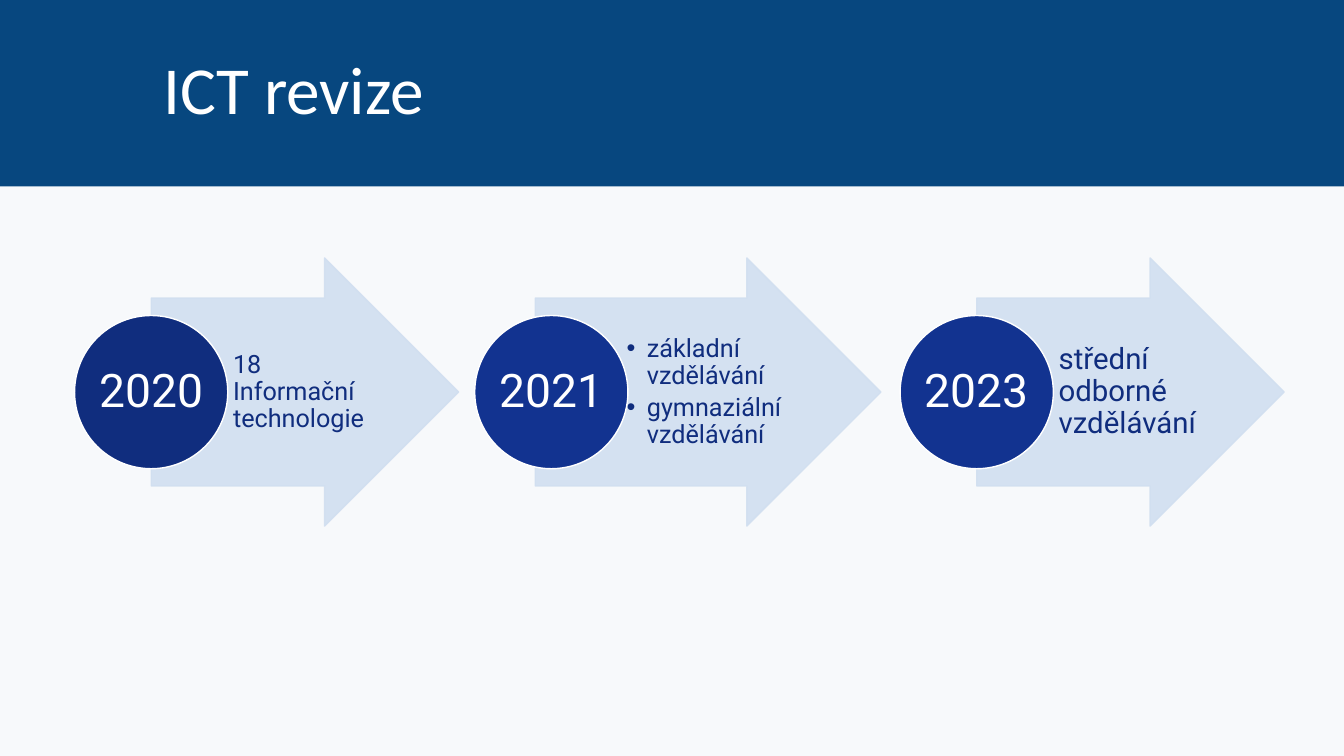
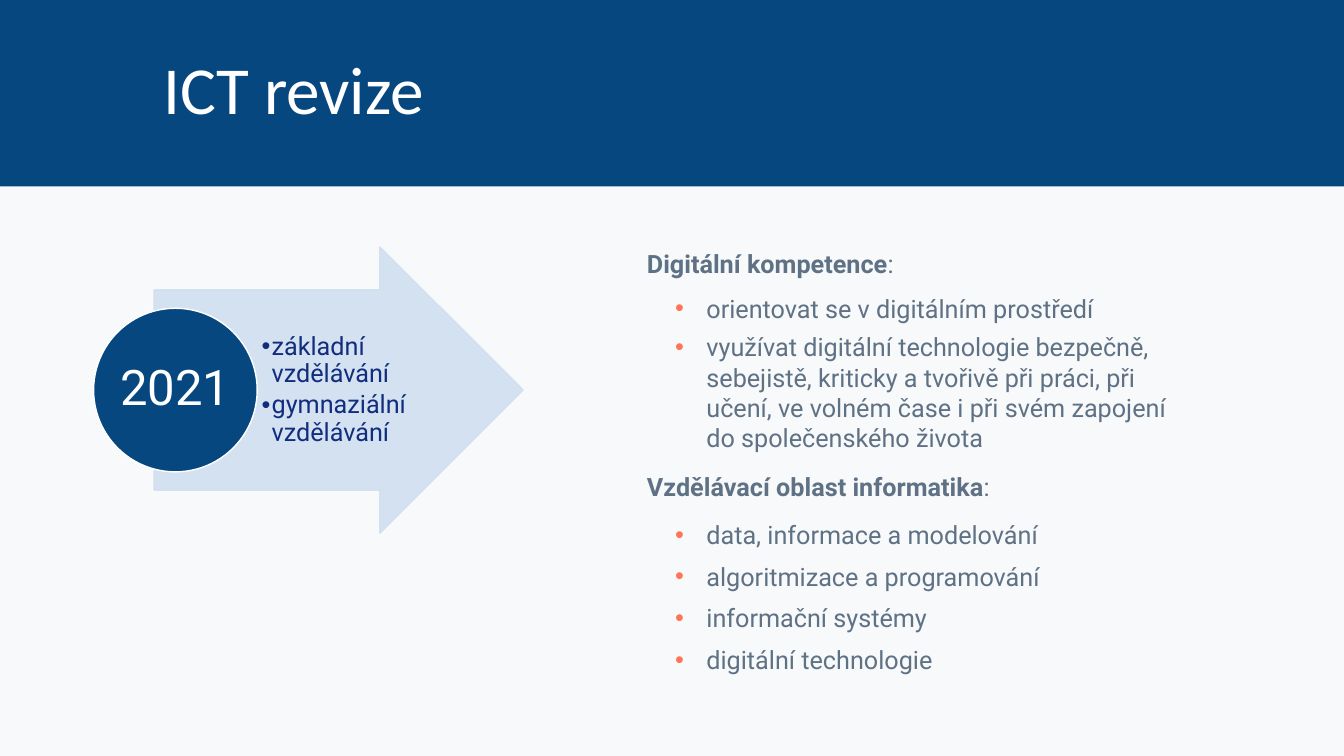
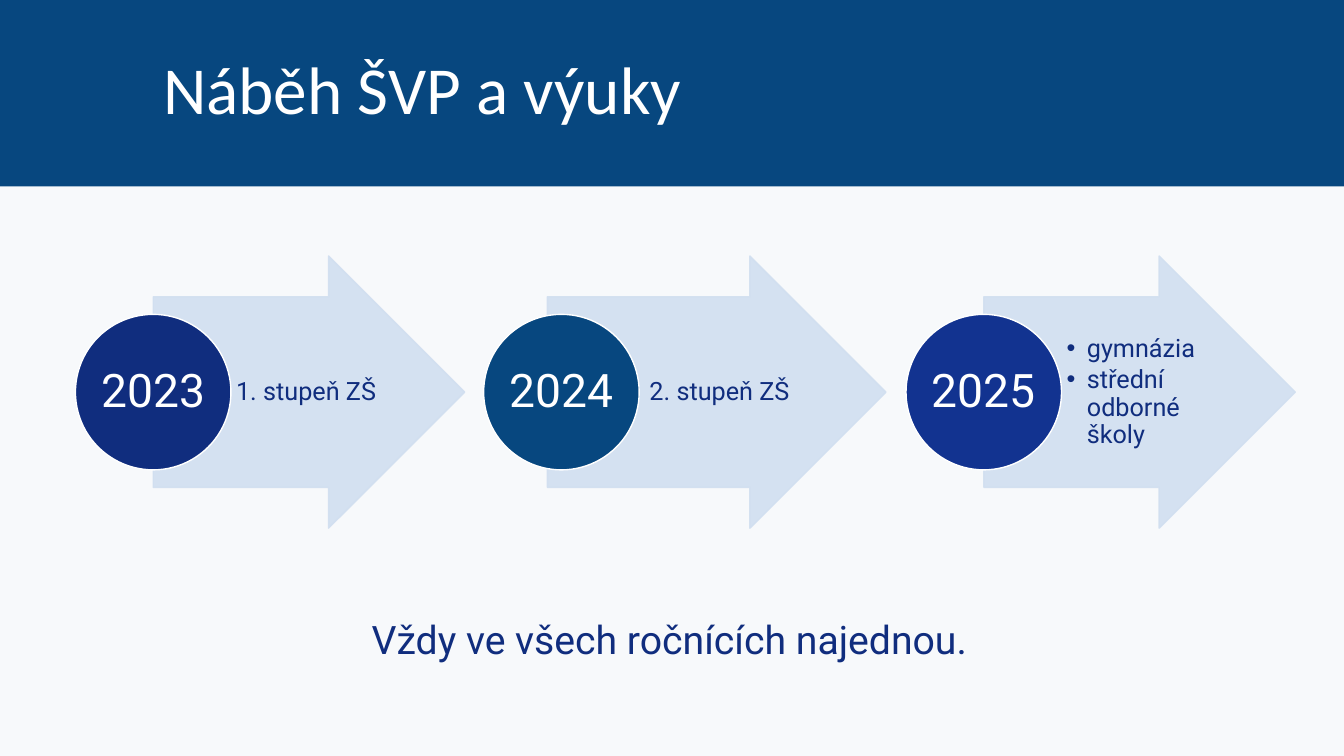
from dataclasses import dataclass

from lxml.etree import SubElement
from pptx import Presentation
from pptx.dml.color import RGBColor
from pptx.enum.shapes import MSO_SHAPE
from pptx.enum.text import MSO_ANCHOR, PP_ALIGN
from pptx.oxml.ns import qn
from pptx.util import Inches, Pt

COLS, ROWS = 40, 22.5
WIDTH, HEIGHT = Inches(13.33), Inches(7.5)
COL, ROW = WIDTH / COLS, HEIGHT / ROWS


@dataclass(frozen=True)
class Theme:
    band: str = "07477F"
    page: str = "F7F9FB"
    arrow: str = "D1DFF0"
    white: str = "FFFFFF"
    navy: str = "102D7E"
    royal: str = "123390"
    grey: str = "5F7184"
    coral: str = "FF7558"
    head_font: str = "Calibri"
    body_font: str = "Roboto"
    title: int = 48
    caption: int = 28
    year: int = 33
    year_large: int = 35
    label_large: int = 21
    body: int = 18


THEME = Theme()


@dataclass(frozen=True)
class Box:
    left: float
    top: float
    width: float
    height: float

    def emu(self) -> tuple[int, int, int, int]:
        return (round(self.left * COL), round(self.top * ROW),
                round(self.width * COL), round(self.height * ROW))


@dataclass(frozen=True)
class Font:
    size: int
    color: str
    name: str = THEME.body_font


@dataclass(frozen=True)
class Para:
    text: str
    lead: str = ""
    indent: float = 0
    hang: float = 0
    bullet_color: str = ""
    spacing: float = 0.9
    before: int = 0
    after: int = 0
    align: PP_ALIGN = PP_ALIGN.LEFT


@dataclass(frozen=True)
class Step:
    year: str
    paras: tuple[Para, ...]
    left: float
    width: float
    color: str
    shift: float = 0
    label_size: int = THEME.body


@dataclass(frozen=True)
class Row:
    middle: float
    height: float
    steps: tuple[Step, ...]
    year_size: int = THEME.year


def rgb(value: str) -> RGBColor:
    return RGBColor.from_string(value)


def apply(target, values: dict) -> None:
    for name, value in values.items():
        setattr(target, name, value)


def write(tf, paras: tuple[Para, ...], font: Font, anchor=MSO_ANCHOR.TOP, insets=None) -> None:
    apply(tf, {"word_wrap": True, "vertical_anchor": anchor})
    if insets:
        sides = ("margin_left", "margin_top", "margin_right", "margin_bottom")
        apply(tf, dict(zip(sides, map(Inches, insets))))
    for i, para in enumerate(paras):
        p = tf.add_paragraph() if i else tf.paragraphs[0]
        apply(p, {"alignment": para.align, "line_spacing": para.spacing,
                  "space_before": Pt(para.before), "space_after": Pt(para.after)})
        for text, bold in ((para.lead, True), (para.text, False)):
            if text:
                r = p.add_run()
                r.text = text
                apply(r.font, {"size": Pt(font.size), "name": font.name, "bold": bold})
                r.font.color.rgb = rgb(font.color)
        pPr = p._p.get_or_add_pPr()
        if para.indent:
            pPr.set("marL", str(round(para.indent * COL)))
            pPr.set("indent", str(round(-para.hang * COL)))
        if para.hang:
            if para.bullet_color:
                SubElement(SubElement(pPr, qn("a:buClr")), qn("a:srgbClr")).set("val", para.bullet_color)
            SubElement(pPr, qn("a:buFont")).set("typeface", "Arial")
            SubElement(pPr, qn("a:buChar")).set("char", "•")


def add_text(s, box: Box, paras: tuple[Para, ...], font: Font, anchor=MSO_ANCHOR.TOP, insets=None) -> None:
    write(s.shapes.add_textbox(*box.emu()).text_frame, paras, font, anchor, insets)


def add_shape(s, kind: MSO_SHAPE, box: Box, fill: str, line: str = ""):
    sp = s.shapes.add_shape(kind, *box.emu())
    sp.shadow.inherit = False
    sp.fill.solid()
    sp.fill.fore_color.rgb = rgb(fill)
    if line:
        sp.line.color.rgb = rgb(line)
        sp.line.width = Pt(1)
    else:
        sp.line.fill.background()
    return sp


def add_step(s, row: Row, step: Step) -> None:
    top = row.middle - row.height / 2
    arrow = add_shape(s, MSO_SHAPE.RIGHT_ARROW, Box(step.left, top, step.width, row.height),
                      THEME.arrow, THEME.arrow)
    arrow.adjustments[0], arrow.adjustments[1] = 0.7, 0.5
    for color in arrow._element.spPr.iter(qn("a:srgbClr")):
        SubElement(color, qn("a:alpha")).set("val", "90000")

    label = Box(step.left + step.width / 4, top + row.height * 0.15, step.width * 0.486, row.height * 0.7)
    add_text(s, label, step.paras, Font(step.label_size, THEME.navy),
             MSO_ANCHOR.MIDDLE, (0.05, 0.01, 0.03, 0.01))

    size = row.height * 4 / 7
    circle = add_shape(s, MSO_SHAPE.OVAL,
                       Box(step.left - size / 2 + step.shift, row.middle - size / 2, size, size),
                       step.color, THEME.white)
    write(circle.text_frame, (Para(step.year, align=PP_ALIGN.CENTER),),
          Font(row.year_size, THEME.white), MSO_ANCHOR.MIDDLE, (0.02,) * 4)


def add_slide(prs, title: str, row: Row):
    s = prs.slides.add_slide(prs.slide_layouts[6])
    s.background.fill.solid()
    s.background.fill.fore_color.rgb = rgb(THEME.page)
    add_shape(s, MSO_SHAPE.RECTANGLE, Box(0, 0, COLS, 5.55), THEME.band)
    add_text(s, Box(4.56, 0.36, 30.45, 4.8), (Para(title),),
             Font(THEME.title, THEME.white, THEME.head_font), MSO_ANCHOR.MIDDLE)
    for step in row.steps:
        add_step(s, row, step)
    return s


def bullets(*texts: str, indent: float = 0.6, hang: float = 0.6, after: int = 3,
            spacing: float = 0.9, color: str = "") -> tuple[Para, ...]:
    return tuple(Para(text, indent=indent, hang=hang, after=after, spacing=spacing, bullet_color=color)
                 for text in texts)


def section(heading: str, spacing: float, *texts: str) -> tuple[Para, ...]:
    return (Para(":", lead=heading, before=10, after=10),
            *bullets(*texts, indent=1.77, hang=0.93, after=6, spacing=spacing, color=THEME.coral))


SCHOOLS = ("základní vzdělávání", "gymnaziální vzdělávání")

REVISION = Row(11.67, 7.98, (
    Step("2020", (Para("18 Informační technologie"),), 4.5, 9.15, THEME.navy),
    Step("2021", bullets(*SCHOOLS), 15.93, 10.29, THEME.royal, 0.48),
    Step("2023", (Para("střední odborné vzdělávání"),), 29.07, 9.15, THEME.royal,
         label_size=THEME.label_large),
))

DETAIL = Row(11.61, 8.52, (
    Step("2021", bullets(*SCHOOLS, hang=0.3), 4.59, 10.98, THEME.band, 0.63),
), THEME.year_large)

ROLLOUT = Row(11.67, 8.1, (
    Step("2023", (Para("1. stupeň ZŠ"),), 4.56, 9.27, THEME.navy),
    Step("2024", (Para("2. stupeň ZŠ", indent=0.37),), 16.29, 10.08, THEME.band, 0.42),
    Step("2025", bullets("gymnázia", "střední odborné školy"), 29.28, 9.27, THEME.royal),
))

COMPETENCES = (
    *section("Digitální kompetence", 1.0,
             "orientovat se v digitálním prostředí",
             "využívat digitální technologie bezpečně, sebejistě, kriticky a tvořivě při práci, "
             "při učení, ve volném čase i při svém zapojení do společenského života"),
    *section("Vzdělávací oblast informatika", 1.1,
             "data, informace a modelování", "algoritmizace a programování",
             "informační systémy", "digitální technologie"),
)


def main() -> None:
    prs = Presentation()
    apply(prs, {"slide_width": WIDTH, "slide_height": HEIGHT})
    add_slide(prs, "ICT revize", REVISION)
    s = add_slide(prs, "ICT revize", DETAIL)
    add_text(s, Box(18.96, 7.35, 16.8, 13.62), COMPETENCES, Font(THEME.body, THEME.grey))
    s = add_slide(prs, "Náběh ŠVP a výuky", ROLLOUT)
    caption = Para("Vždy ve všech ročnících najednou.", before=10, after=10, align=PP_ALIGN.CENTER)
    add_text(s, Box(4.83, 18.33, 30.18, 3.18), (caption,), Font(THEME.caption, THEME.navy))
    prs.save("out.pptx")


if __name__ == "__main__":
    main()
